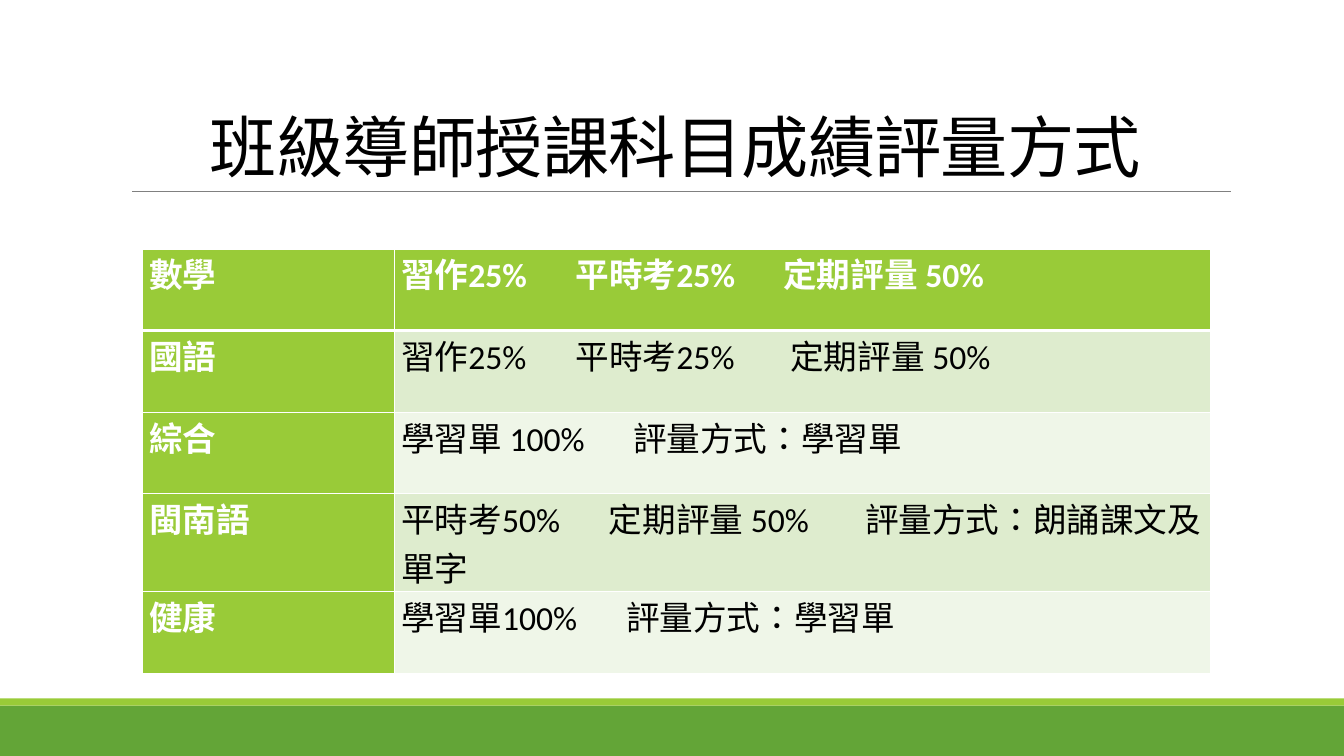
from lxml import etree
from pptx import Presentation
from pptx import util as u
from pptx.dml.color import RGBColor
from pptx.enum import shapes, text
from pptx.oxml import ns

TITLE = "班級導師授課科目成績評量方式"
ROW, TALL_ROW = 0.81, 0.97
SUBJECTS = [
    ("數學", ["習作25%", "平時考25%", "定期評量 50%"], [1.73, 3.79], ROW),
    ("國語", ["習作25%", "平時考25%", "定期評量 50%"], [1.73, 3.86], ROW),
    ("綜合", ["學習單 100%", "評量方式：學習單"], [2.3], ROW),
    ("閩南語", ["平時考50%", "定期評量 50%", "評量方式：朗誦課文及單字"], [2.06, 4.6], TALL_ROW),
    ("健康", ["學習單100%", "評量方式：學習單"], [2.23], ROW),
]
LIME, GREEN, GRAY, WHITE, BLACK = "99CB38", "63A537", "808080", "FFFFFF", "000000"
BANDS = ["EFF6E8", "DEECCE"]
WIDTH, HEIGHT = 13.33, 7.5
COLUMNS = [2.5, 8.1]


def color(code):
    return RGBColor.from_string(code)


def style(paragraph, font_name, size, code, bold=False):
    for run in paragraph.runs:
        run.font.name = font_name
        run.font.size = u.Pt(size)
        run.font.bold = bold
        run.font.color.rgb = color(code)
        run.font._element.set("lang", "zh-TW")


def add_strip(slide, top, height, code):
    strip = slide.shapes.add_shape(
        shapes.MSO_SHAPE.RECTANGLE, 0, u.Inches(top), u.Inches(WIDTH), u.Inches(height))
    strip.shadow.inherit = False
    strip.fill.solid()
    strip.fill.fore_color.rgb = color(code)
    strip.line.fill.background()


def add_rule(slide):
    rule = slide.shapes.add_connector(
        shapes.MSO_CONNECTOR.STRAIGHT, u.Inches(1.31), u.Inches(1.9), u.Inches(12.21), u.Inches(1.9))
    rule.line.color.rgb = color(GRAY)
    rule.line.width = u.Pt(0.5)
    etree.SubElement(rule._element.spPr, ns.qn("a:effectLst"))


def add_title(slide):
    heading = slide.shapes.add_textbox(
        u.Inches(1.2), u.Inches(0.31), u.Inches(11), u.Inches(1.59)).text_frame
    heading.word_wrap = True
    heading.vertical_anchor = text.MSO_ANCHOR.BOTTOM
    heading.text = TITLE
    line = heading.paragraphs[0]
    line.alignment = text.PP_ALIGN.CENTER
    line.line_spacing = 0.85
    style(line, "Cambria", 48, BLACK)
    line.runs[0].font._element.set("spc", "-50")


def set_borders(cell, top, bottom):
    widths = {"L": 1, "R": 1, "T": top, "B": bottom}
    for index, (side, width) in enumerate(widths.items()):
        border = etree.Element(ns.qn("a:ln" + side), w=str(u.Pt(width)))
        fill = etree.SubElement(border, ns.qn("a:solidFill"))
        etree.SubElement(fill, ns.qn("a:srgbClr"), val=WHITE)
        cell._tc.get_or_add_tcPr().insert(index, border)


def set_tabs(paragraph, stops):
    tabs = etree.SubElement(paragraph._p.get_or_add_pPr(), ns.qn("a:tabLst"))
    for stop in stops:
        etree.SubElement(tabs, ns.qn("a:tab"), pos=str(u.Inches(stop)), algn="l")


def add_grading(slide):
    total = sum(height for *_, height in SUBJECTS)
    grading = slide.shapes.add_table(
        len(SUBJECTS), len(COLUMNS), u.Inches(1.41), u.Inches(2.47),
        u.Inches(sum(COLUMNS)), u.Inches(total)).table
    for column, width in zip(grading.columns, COLUMNS):
        column.width = u.Inches(width)
    for r, (subject, weights, stops, height) in enumerate(SUBJECTS):
        grading.rows[r].height = u.Inches(height)
        for c, words in enumerate([subject, "\t".join(weights)]):
            cell = grading.cell(r, c)
            strong = r == 0 or c == 0
            cell.margin_left = cell.margin_right = u.Inches(0.07)
            cell.margin_top = cell.margin_bottom = 0
            cell.fill.solid()
            cell.fill.fore_color.rgb = color(LIME if strong else BANDS[r % 2])
            set_borders(cell, 3 if r == 1 else 1, 3 if r == 0 else 1)
            cell.text_frame.text = words
            line = cell.text_frame.paragraphs[0]
            style(line, "Calibri", 24, WHITE if strong else BLACK, strong)
            if c == 1:
                set_tabs(line, stops)


def main():
    deck = Presentation()
    deck.slide_width, deck.slide_height = u.Inches(WIDTH), u.Inches(HEIGHT)
    slide = deck.slides.add_slide(deck.slide_layouts[6])
    add_strip(slide, 7, 0.5, GREEN)
    add_strip(slide, 6.93, 0.07, LIME)
    add_rule(slide)
    add_title(slide)
    add_grading(slide)
    deck.save("out.pptx")


if __name__ == "__main__":
    main()
